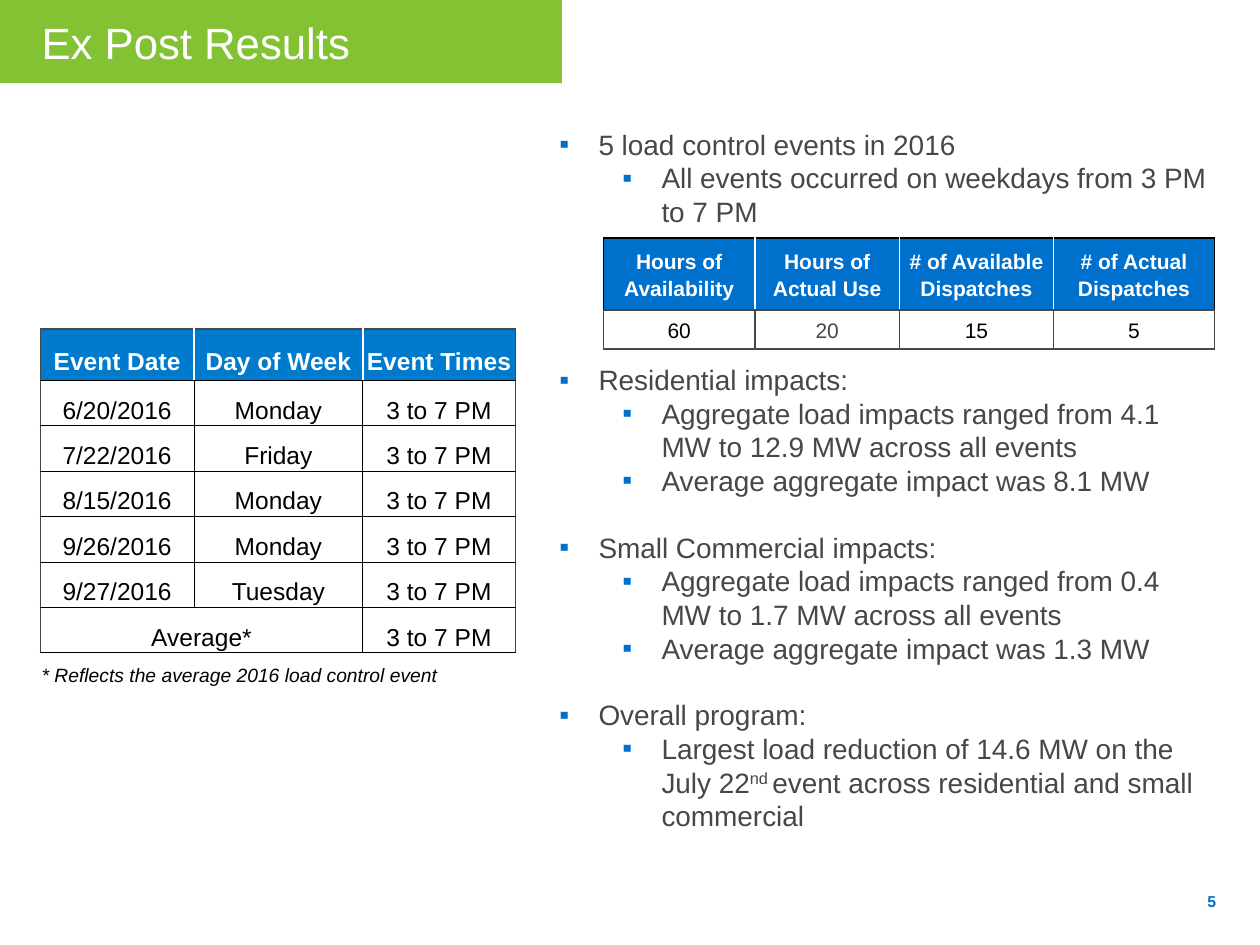
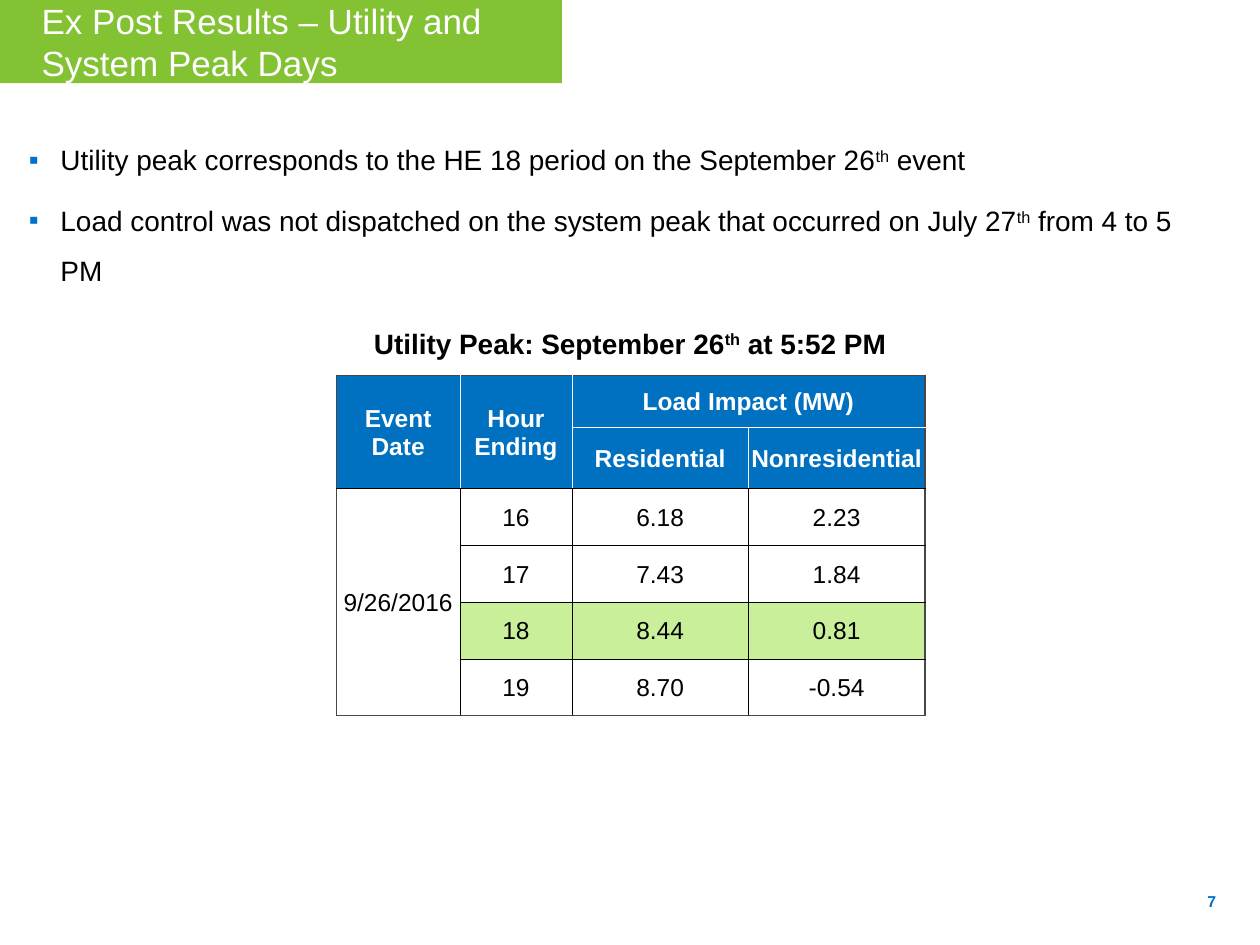
import pptx
import pptx.dml.color
import pptx.enum.text
import pptx.oxml
import pptx.oxml.ns
import pptx.util
from lxml import etree

Inches, Pt = pptx.util.Inches, pptx.util.Pt
ALIGN = pptx.enum.text.PP_ALIGN
ANCHOR = pptx.enum.text.MSO_ANCHOR
NO_FIT = pptx.enum.text.MSO_AUTO_SIZE.NONE
qn = pptx.oxml.ns.qn

FONT = "Arial"
GREEN, LIME = "77BC1F", "CAEF9B"
BLUE, HEAD_BLUE, PEAK_BLUE = "0070CD", "007ACD", "0070C0"
GRAY, BLACK, WHITE = "464749", "000000", "FFFFFF"

BAND = (-0.02, 0, 4.48, 0.66)
PAGE_NUMBER = (9.12, 6.95, 0.63, 0.4)


def rgb(color):
    """Turn a hex string into a colour."""
    return pptx.dml.color.RGBColor.from_string(color)


def fmt(obj, **values):
    """Set each named attribute on an object."""
    for name, value in values.items():
        setattr(obj, name, value)


def place(sp, box):
    """Move a shape to a box given in inches."""
    names = ("left", "top", "width", "height")
    fmt(sp, **{name: Inches(v) for name, v in zip(names, box)})


def write(p, text, size, color, **font):
    """Add runs to a paragraph; text between carets is superscript."""
    for i, part in enumerate(text.split("^")):
        r = p.add_run()
        r.text = part
        fmt(r.font, name=FONT, size=Pt(size), **font)
        r.font.color.rgb = rgb(color)
        if i % 2:
            r._r.get_or_add_rPr().set("baseline", "30000")


def add_bullet(p, margin, hang):
    """Give a paragraph a hanging blue square bullet."""
    pPr = p._p.get_or_add_pPr()
    pPr.set("marL", str(Inches(margin)))
    pPr.set("indent", str(-Inches(hang)))
    clr = etree.SubElement(pPr, qn("a:buClr"))
    etree.SubElement(clr, qn("a:srgbClr"), val=BLUE)
    etree.SubElement(pPr, qn("a:buFont"), typeface=FONT)
    etree.SubElement(pPr, qn("a:buChar"), char="▪")


def add_text(s, box, text, size, color, align, anchor=ANCHOR.TOP):
    """Add a bold one-paragraph text box."""
    tf = s.shapes.add_textbox(*map(Inches, box)).text_frame
    fmt(tf, word_wrap=True, vertical_anchor=anchor)
    p = tf.paragraphs[0]
    p.alignment = align
    write(p, text, size, color, bold=True)


def add_base(prs, title, size, number):
    """Add a slide with its green title band and page number."""
    s = prs.slides.add_slide(prs.slide_layouts[1])
    sp = s.shapes.title
    place(sp, BAND)
    sp.fill.solid()
    sp.fill.fore_color.rgb = rgb(GREEN)
    clr = sp._element.spPr.find(".//" + qn("a:srgbClr"))
    etree.SubElement(clr, qn("a:alpha"), val="91000")
    tf = sp.text_frame
    fmt(tf, word_wrap=True, auto_size=NO_FIT, vertical_anchor=ANCHOR.MIDDLE,
        margin_left=Inches(0.35), margin_right=Inches(0.18))
    p = tf.paragraphs[0]
    p.alignment = ALIGN.LEFT
    write(p, title, size, WHITE)
    add_text(s, PAGE_NUMBER, number, 9, BLUE, ALIGN.RIGHT, ANCHOR.MIDDLE)
    return s


def add_list(s, box, items, color, hang, spacing=1.0):
    """Fill the body placeholder from (level, space before, text) items."""
    sp = s.placeholders[1]
    place(sp, box)
    tf = sp.text_frame
    fmt(tf, word_wrap=True, auto_size=NO_FIT, vertical_anchor=ANCHOR.TOP)
    for i, (level, before, text) in enumerate(items):
        p = tf.add_paragraph() if i else tf.paragraphs[0]
        fmt(p, level=level, alignment=ALIGN.LEFT, line_spacing=spacing,
            space_before=Pt(before), space_after=Pt(0))
        add_bullet(p, hang + 0.5 * level, hang)
        write(p, text, 16, color)


def set_borders(cell, lines):
    """Draw cell edges from a dict of side to (colour, points)."""
    tcPr = cell._tc.get_or_add_tcPr()
    for i, side in enumerate("LRTB"):
        if side in lines:
            color, width = lines[side]
            ln = etree.Element(qn("a:ln" + side), w=str(Pt(width)))
            fill = etree.SubElement(ln, qn("a:solidFill"))
            etree.SubElement(fill, qn("a:srgbClr"), val=color)
            tcPr.insert(i, ln)


def add_table(s, box, cols, heights, rows, head, fill, size, inner, split,
              edge=(GRAY, 1), head_edge=(GRAY, 1), spans=(), spacing=1.0,
              margins=(0.01, 0.01, 0.01, 0)):
    """Add a ruled table whose first head rows are filled."""
    frame = s.shapes.add_table(len(rows), len(cols), *map(Inches, box))
    tbl = frame.table
    fmt(tbl, first_row=False, horz_banding=False)
    for col, width in zip(tbl.columns, cols):
        col.width = Inches(width)
    for row, height in zip(tbl.rows, heights):
        row.height = Inches(height)
    for r1, c1, r2, c2 in spans:
        tbl.cell(r1, c1).merge(tbl.cell(r2, c2))
    sides = ("margin_left", "margin_top", "margin_right", "margin_bottom")
    for i, row in enumerate(rows):
        for j, text in enumerate(row):
            cell = tbl.cell(i, j)
            is_head = i < head
            if is_head:
                cell.fill.solid()
                cell.fill.fore_color.rgb = rgb(fill)
            else:
                cell.fill.background()
            if cell.is_spanned:
                continue
            fmt(cell, vertical_anchor=ANCHOR.MIDDLE,
                **{k: Inches(v) for k, v in zip(sides, margins)})
            p = cell.text_frame.paragraphs[0]
            fmt(p, alignment=ALIGN.CENTER, line_spacing=spacing)
            write(p, text, size, WHITE if is_head else BLACK, bold=is_head)
            bottom = i + (cell.span_height if cell.is_merge_origin else 1)
            right = j + (cell.span_width if cell.is_merge_origin else 1)
            outer = head_edge if is_head else edge
            rule = split if is_head else inner
            set_borders(cell, {
                "L": rule if j else outer,
                "R": rule if right < len(cols) else outer,
                "T": outer if i == 0 else inner if i == head else rule,
                "B": outer if bottom == len(rows)
                else inner if bottom == head else rule})
    return tbl


def add_events(s, x, y):
    """Add the table of event days with its footnote."""
    days = [("6/20/2016", "Monday"), ("7/22/2016", "Friday"),
            ("8/15/2016", "Monday"), ("9/26/2016", "Monday"),
            ("9/27/2016", "Tuesday"), ("Average*", "")]
    rows = [("Event Date", "Day of Week", "Event Times")]
    rows += [(*day, "3 to 7 PM") for day in days]
    rows.append(("", "", ""))
    last = len(rows) - 1
    tbl = add_table(s, (x, y, 3.77, 2.79), (1.22, 1.34, 1.21),
                    [0.41] + [0.34] * last, rows, 1, HEAD_BLUE, 14,
                    (BLACK, 0.5), (WHITE, 1), spacing=1.5,
                    spans=[(last - 1, 0, last - 1, 1), (last, 0, last, 2)])
    note = tbl.cell(last, 0)
    note.vertical_anchor = ANCHOR.TOP
    tcPr = note._tc.tcPr
    for side in "LRB":
        ln = tcPr.find(qn("a:ln" + side))
        ln.remove(ln[0])
        etree.SubElement(ln, qn("a:noFill"))
    p = note.text_frame.paragraphs[0]
    p.clear()
    p.alignment = ALIGN.LEFT
    write(p, "* Reflects the average 2016 load control event", 11, BLACK,
          italic=True)


def add_hours(s, x, y):
    """Add the table of available and used hours."""
    rows = [("Hours of Availability", "Hours of Actual Use",
             "# of Available Dispatches", "# of Actual Dispatches"),
            ("60", "20", "15", "5")]
    tbl = add_table(s, (x, y, 4.85, 0.88), (1.2, 1.15, 1.22, 1.28),
                    (0.57, 0.31), rows, 1, BLUE, 12, (GRAY, 1), (WHITE, 1),
                    head_edge=(BLACK, 1), spacing=1.15,
                    margins=(0.07, 0, 0.07, 0))
    used = tbl.cell(1, 1).text_frame.paragraphs[0].runs[0]
    used.font.color.rgb = rgb(GRAY)


def add_peak(s, x, y):
    """Add the captioned table of hourly impacts on the peak day."""
    add_text(s, (x, y, 4.66, 0.38), "Utility Peak: September 26^th^ at 5:52 PM",
             16, BLACK, ALIGN.CENTER)
    rows = [("Event Date", "Hour Ending", "Load Impact (MW)", ""),
            ("", "", "Residential", "Nonresidential"),
            ("9/26/2016", "16", "6.18", "2.23"),
            ("", "17", "7.43", "1.84"),
            ("", "18", "8.44", "0.81"),
            ("", "19", "8.70", "-0.54")]
    tbl = add_table(s, (x, y + 0.44, 4.66, 2.7), (0.98, 0.89, 1.4, 1.4),
                    [0.41, 0.49] + [0.45] * 4, rows, 2, PEAK_BLUE, 14,
                    (BLACK, 0.5), (WHITE, 0.5),
                    spans=[(0, 0, 1, 0), (0, 1, 1, 1), (0, 2, 0, 3),
                           (2, 0, 5, 0)])
    for j in range(1, 4):
        cell = tbl.cell(4, j)
        cell.fill.solid()
        cell.fill.fore_color.rgb = rgb(LIME)


def build_results(prs):
    """Build the event results slide."""
    s = add_base(prs, "Ex Post Results", 25, "5")
    impact = "Aggregate load impacts ranged from {} across all events"
    average = "Average aggregate impact was {} MW"
    add_list(s, (4.34, 0.96, 5.42, 5.81), [
        (0, 0, "5 load control events in 2016"),
        (1, 0, "All events occurred on weekdays from 3 PM to 7 PM"),
        (0, 77, "Residential impacts:"),
        (1, 0, impact.format("4.1 MW to 12.9 MW")),
        (1, 0, average.format("8.1")),
        (0, 19, "Small Commercial impacts:"),
        (1, 0, impact.format("0.4 MW to 1.7 MW")),
        (1, 0, average.format("1.3")),
        (0, 19, "Overall program:"),
        (1, 0, "Largest load reduction of 14.6 MW on the July 22^nd ^event "
               "across residential and small commercial"),
    ], GRAY, 0.31)
    add_events(s, 0.32, 2.61)
    add_hours(s, 4.79, 1.89)


def build_peak_days(prs):
    """Build the peak days slide."""
    s = add_base(prs, "Ex Post Results – Utility and System Peak Days", 20, "7")
    add_list(s, (0.13, 0.95, 9.6, 1.42), [
        (0, 0, "Utility peak corresponds to the HE 18 period on the "
               "September 26^th^ event"),
        (0, 6, "Load control was not dispatched on the system peak that "
               "occurred on July 27^th^ from 4 to 5 PM"),
    ], BLACK, 0.25, 1.5)
    add_peak(s, 2.67, 2.54)


def main():
    """Build and save the slides."""
    prs = pptx.Presentation()
    fmt(prs, slide_width=Inches(10), slide_height=Inches(7.5))
    build_results(prs)
    build_peak_days(prs)
    prs.save("out.pptx")


if __name__ == "__main__":
    main()
